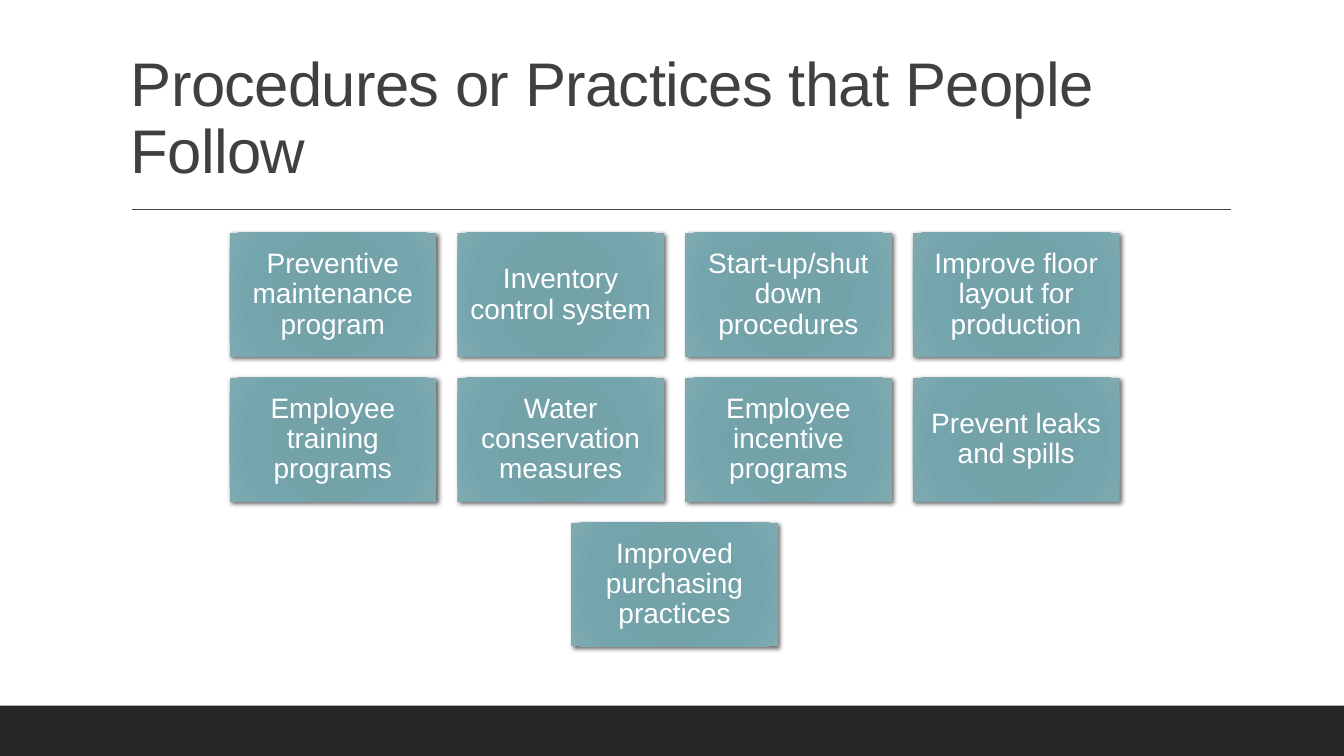
"""Build a slide with nine cards of procedures or practices that people follow."""
from dataclasses import dataclass

from pptx import Presentation
from pptx.dml.color import RGBColor
from pptx.enum.shapes import MSO_CONNECTOR, MSO_SHAPE
from pptx.enum.text import MSO_ANCHOR, PP_ALIGN
from pptx.oxml import parse_xml
from pptx.oxml.ns import nsdecls
from pptx.slide import Slide
from pptx.text.text import TextFrame
from pptx.util import Cm, Pt

RECTANGLE = MSO_SHAPE.RECTANGLE
STRAIGHT = MSO_CONNECTOR.STRAIGHT
MIDDLE, BOTTOM = MSO_ANCHOR.MIDDLE, MSO_ANCHOR.BOTTOM
LEFT, CENTER = PP_ALIGN.LEFT, PP_ALIGN.CENTER

FONT = "Arial"
COLORS = {
    "footer": "262626",
    "title": "404040",
    "card_text": "FFFFFF",
    "shadow": "000000",
    "card_center": "71A1A9",
    "card_inner": "73A2A9",
    "card_outer": "74A5AD",
    "card_edge": "7EAAB0",
}
CARD_STOPS = {"card_center": 0, "card_inner": 34, "card_outer": 70, "card_edge": 100}

PAGE_WIDTH, PAGE_HEIGHT = 33.87, 19.05
FOOTER_HEIGHT = 1.27
CARD_WIDTH, CARD_HEIGHT = 5.21, 3.12
COLUMN_STEP, ROW_STEP = 5.74, 3.65
GRID_CENTER, GRID_TOP = 17.0, 5.87
CARD_INSET = 0.2

CARD_ROWS = [
    [
        "Preventive maintenance program",
        "Inventory control system",
        "Start-up/shut down procedures",
        "Improve floor layout for production",
    ],
    [
        "Employee training programs",
        "Water conservation measures",
        "Employee incentive programs",
        "Prevent leaks and spills",
    ],
    ["Improved purchasing practices"],
]


@dataclass(frozen=True)
class Card:
    text: str
    left: float
    top: float


def lay_out_cards() -> list[Card]:
    cards = []
    for row, texts in enumerate(CARD_ROWS):
        row_width = (len(texts) - 1) * COLUMN_STEP + CARD_WIDTH
        row_left = GRID_CENTER - row_width / 2
        for column, text in enumerate(texts):
            cards.append(Card(text, row_left + column * COLUMN_STEP, GRID_TOP + row * ROW_STEP))
    return cards


def write_text(
    frame: TextFrame, text: str, size: int, color: str, align: PP_ALIGN, anchor: MSO_ANCHOR, tracking: int = 0
) -> None:
    frame.word_wrap = True
    frame.vertical_anchor = anchor
    para = frame.paragraphs[0]
    para.alignment = align
    para.line_spacing = 0.9
    span = para.add_run()
    span.text = text
    span.font.name = FONT
    span.font.size = Pt(size)
    span.font.color.rgb = RGBColor.from_string(COLORS[color])
    if tracking:
        span.font._element.set("spc", str(tracking))


def add_footer(page: Slide) -> None:
    bar = page.shapes.add_shape(
        RECTANGLE, 0, Cm(PAGE_HEIGHT - FOOTER_HEIGHT), Cm(PAGE_WIDTH), Cm(FOOTER_HEIGHT)
    )
    bar.shadow.inherit = False
    bar.fill.solid()
    bar.fill.fore_color.rgb = RGBColor.from_string(COLORS["footer"])
    bar.line.fill.background()


def add_heading(page: Slide) -> None:
    rule = page.shapes.add_connector(STRAIGHT, Cm(3.33), Cm(5.28), Cm(31.01), Cm(5.28))
    rule.line.color.rgb = RGBColor.from_string(COLORS["title"])
    rule.line.width = Pt(1)
    rule._element.spPr.append(parse_xml(f"<a:effectLst {nsdecls('a')}/>"))
    box = page.shapes.add_textbox(Cm(3.05), Cm(0.79), Cm(27.94), Cm(4.04))
    write_text(
        box.text_frame, "Procedures or Practices that People Follow", 44, "title", LEFT, BOTTOM, tracking=-50
    )


def add_card(page: Slide, card: Card) -> None:
    box = page.shapes.add_shape(RECTANGLE, Cm(card.left), Cm(card.top), Cm(CARD_WIDTH), Cm(CARD_HEIGHT))
    stops = "".join(
        f'<a:gs pos="{position * 1000}"><a:srgbClr val="{COLORS[name]}"/></a:gs>'
        for name, position in CARD_STOPS.items()
    )
    properties = box._element.spPr
    properties.append(parse_xml(
        f'<a:gradFill {nsdecls("a")} rotWithShape="1"><a:gsLst>{stops}</a:gsLst><a:path path="circle">'
        '<a:fillToRect l="100000" t="100000" r="100000" b="100000"/></a:path></a:gradFill>'
    ))
    box.line.fill.background()
    properties.append(parse_xml(
        f'<a:effectLst {nsdecls("a")}><a:outerShdw blurRad="{Pt(3.5)}" dist="{Pt(2)}" dir="2700000" '
        f'algn="br" rotWithShape="0"><a:srgbClr val="{COLORS["shadow"]}"><a:alpha val="60000"/>'
        "</a:srgbClr></a:outerShdw></a:effectLst>"
    ))
    frame = box.text_frame
    frame.margin_left = frame.margin_right = Cm(CARD_INSET)
    frame.margin_top = frame.margin_bottom = Cm(CARD_INSET)
    write_text(frame, card.text, 20, "card_text", CENTER, MIDDLE)


def main() -> None:
    deck = Presentation()
    deck.slide_width, deck.slide_height = Cm(PAGE_WIDTH), Cm(PAGE_HEIGHT)
    page = deck.slides.add_slide(deck.slide_layouts[6])
    add_footer(page)
    add_heading(page)
    for card in lay_out_cards():
        add_card(page, card)
    deck.save("out.pptx")


if __name__ == "__main__":
    main()
